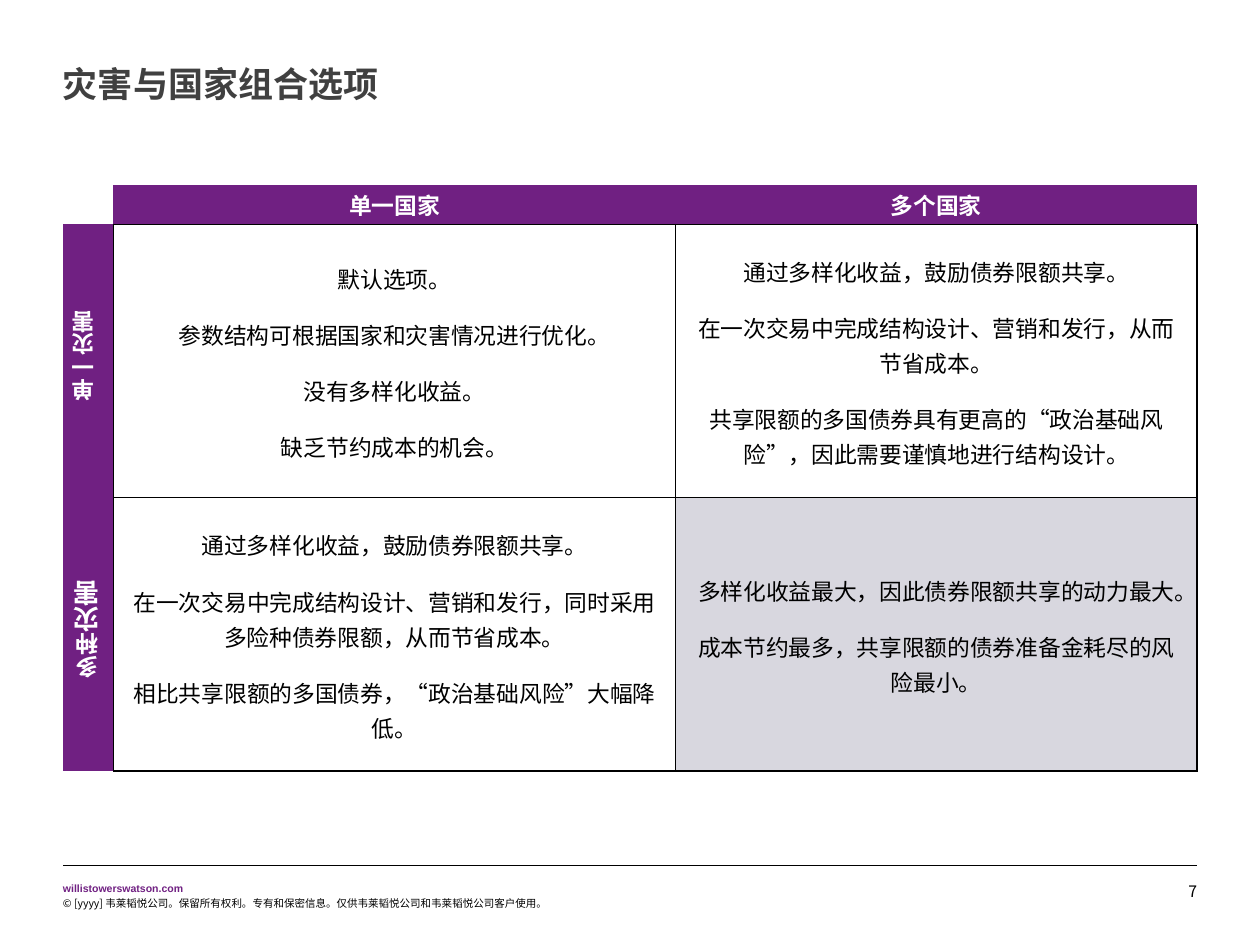
"""Build the slide that sets out peril and country combinations."""
from lxml import etree
from pptx import Presentation
from pptx.dml.color import RGBColor
from pptx.enum import lang, shapes, text
from pptx.oxml import ns
from pptx.util import Inches, Pt

PURPLE = RGBColor(0x70, 0x20, 0x82)
GREY = RGBColor(0xD8, 0xD7, 0xDF)
DARK = RGBColor(0x40, 0x40, 0x40)
BLACK = RGBColor(0, 0, 0)
WHITE = RGBColor(255, 255, 255)
CJK = "Noto Sans CJK SC"
PLAIN = "{2D5ABB26-0587-4C30-8999-92F81FD0307C}"
MID = text.MSO_ANCHOR.MIDDLE
TOP = text.MSO_ANCHOR.TOP

HEAD = {"size": Pt(13), "bold": True, "color": WHITE}
BODY = {"size": Pt(13), "bold": False, "color": BLACK}
BIG = {**HEAD, "size": Pt(15)}
GAP = {"alignment": text.PP_ALIGN.CENTER, "line_spacing": 1.07, "space_after": Pt(6)}

COLS = ["单一国家", "多个国家"]
ROWS = [[("单一灾害", HEAD)], [("多种", HEAD), ("灾害", BIG)]]
CELLS = [
    [
        ["默认选项。", "参数结构可根据国家和灾害情况进行优化。",
         "没有多样化收益。", "缺乏节约成本的机会。"],
        ["通过多样化收益，鼓励债券限额共享。",
         "在一次交易中完成结构设计、营销和发行，从而节省成本。",
         "共享限额的多国债券具有更高的“政治基础风险”，因此需要谨慎地进行结构设计。"],
    ],
    [
        ["通过多样化收益，鼓励债券限额共享。",
         "在一次交易中完成结构设计、营销和发行，同时采用多险种债券限额，从而节省成本。",
         "相比共享限额的多国债券，“政治基础风险”大幅降低。"],
        ["多样化收益最大，因此债券限额共享的动力最大。",
         "成本节约最多，共享限额的债券准备金耗尽的风险最小。"],
    ],
]


def put(obj, vals):
    """Set each attribute named in a dict."""
    for key, val in vals.items():
        setattr(obj, key, val)


def add_run(para, words, form):
    """Add one formatted run to a paragraph."""
    run = para.add_run()
    run.text = words
    form = {"name": CJK, **form}
    run.font.color.rgb = form.pop("color")
    put(run.font, form)
    if form["name"] == CJK:
        run.font.language_id = lang.MSO_LANGUAGE_ID.SIMPLIFIED_CHINESE
        etree.SubElement(run.font._element, ns.qn("a:ea"), typeface=CJK)


def add_text(slide, box, words, form, para=None, wrap=True, anchor=TOP):
    """Add a one-line text box without insets."""
    frame = slide.shapes.add_textbox(*map(Inches, box)).text_frame
    put(frame, {"word_wrap": wrap, "vertical_anchor": anchor, "margin_left": 0,
                "margin_right": 0, "margin_top": 0, "margin_bottom": 0})
    put(frame.paragraphs[0], para or {})
    add_run(frame.paragraphs[0], words, form)


def add_rule(slide, left, right, top):
    """Add the thin line above the footer."""
    rule = slide.shapes.add_connector(
        shapes.MSO_CONNECTOR.STRAIGHT, *map(Inches, (left, top, right, top)))
    rule.line.color.rgb = BLACK
    rule.line.width = Pt(0.25)
    etree.SubElement(rule._element.spPr, ns.qn("a:effectLst"))


def add_edges(cell, sides):
    """Draw the named cell sides in black and clear the others."""
    props = cell._tc.get_or_add_tcPr()
    for side in "LRTB":
        edge = etree.SubElement(props, ns.qn("a:ln" + side), w=str(Pt(1)))
        if side in sides:
            fill = etree.SubElement(edge, ns.qn("a:solidFill"))
            etree.SubElement(fill, ns.qn("a:srgbClr"), val=str(BLACK))
        else:
            etree.SubElement(edge, ns.qn("a:noFill"))


def fill_cell(cell, paras, sides, fill=None, anchor=TOP, turn=False):
    """Write a cell's paragraphs, each a list of words and formats."""
    put(cell, {"margin_left": Inches(0.1), "margin_right": Inches(0.1),
               "margin_top": Inches(0.01), "margin_bottom": 0,
               "vertical_anchor": anchor})
    add_edges(cell, sides)
    if fill is None:
        cell.fill.background()
    else:
        cell.fill.solid()
        cell.fill.fore_color.rgb = fill
    if turn:
        cell._tc.tcPr.set("vert", "vert270")
    for num, runs in enumerate(paras):
        para = cell.text_frame.add_paragraph() if num else cell.text_frame.paragraphs[0]
        put(para, GAP)
        if num:
            para.space_before = Pt(6)
        if turn:
            para._p.get_or_add_pPr().set("marL", str(Inches(0.08)))
        for words, form in runs:
            add_run(para, words, form)


def add_grid(slide):
    """Add the table of perils by countries."""
    frame = slide.shapes.add_table(3, 3, *map(Inches, (0.5, 1.47, 9, 4.64)))
    grid = frame.table
    put(grid, {"first_row": False, "horz_banding": False})
    grid._tbl.tblPr.find(ns.qn("a:tableStyleId")).text = PLAIN
    for col, width in zip(grid.columns, (0.4, 4.46, 4.14)):
        col.width = Inches(width)
    for row, height in zip(grid.rows, (0.3, 2.17, 2.17)):
        row.height = Inches(height)
    fill_cell(grid.cell(0, 0), [], "")
    for num, words in enumerate(COLS, 1):
        fill_cell(grid.cell(0, num), [[(words, HEAD)]], "B", PURPLE)
    for row, (label, cells) in enumerate(zip(ROWS, CELLS), 1):
        fill_cell(grid.cell(row, 0), [label], "R", PURPLE, turn=True)
        for col, lines in enumerate(cells, 1):
            fill = GREY if row == col == 2 else None
            paras = [[(words, BODY)] for words in lines]
            fill_cell(grid.cell(row, col), paras, "LRTB", fill, MID)


def main():
    """Build and save the slide."""
    deck = Presentation()
    put(deck, {"slide_width": Inches(10), "slide_height": Inches(7.5)})
    slide = deck.slides.add_slide(deck.slide_layouts[6])
    add_text(slide, (0.5, 7, 0.96, 0.1), "willistowerswatson.com",
             {"name": "Arial", "size": Pt(6), "bold": True, "color": PURPLE},
             {"space_after": Pt(2)}, wrap=False)
    add_rule(slide, 0.5, 9.5, 6.87)
    add_text(slide, (0.5, 0.5, 9, 0.34), "灾害与国家组合选项",
             {"size": Pt(20), "bold": True, "color": DARK})
    add_text(slide, (9.08, 7, 0.42, 0.15), "7", {"size": Pt(9), "color": BLACK},
             {"alignment": text.PP_ALIGN.RIGHT, "space_after": Pt(6)},
             anchor=text.MSO_ANCHOR.BOTTOM)
    add_text(slide, (0.5, 7.12, 5.77, 0.1),
             "© [yyyy] 韦莱韬悦公司。保留所有权利。专有和保密信息。"
             "仅供韦莱韬悦公司和韦莱韬悦公司客户使用。",
             {"size": Pt(6), "color": BLACK}, {"space_after": Pt(6)})
    add_grid(slide)
    deck.save("out.pptx")


if __name__ == "__main__":
    main()
